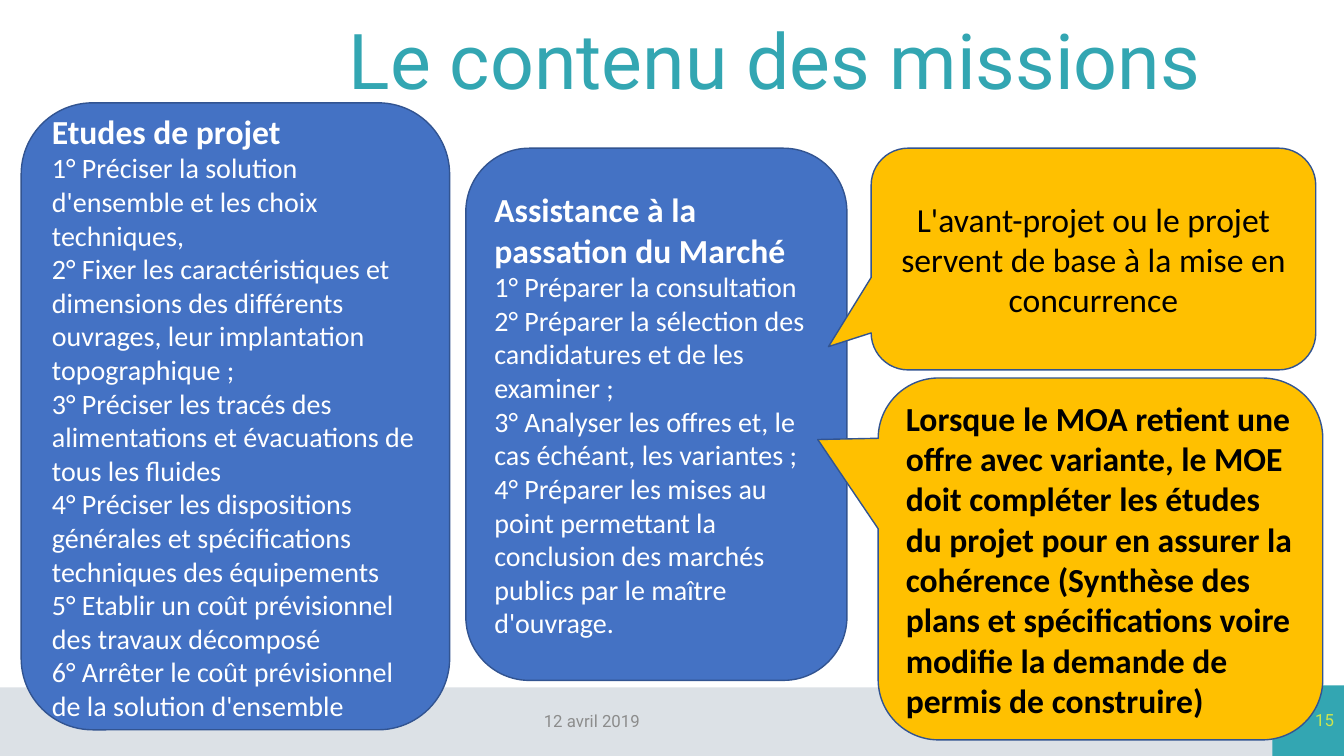
from dataclasses import dataclass

from pptx import Presentation
from pptx.dml.color import RGBColor
from pptx.enum.shapes import MSO_SHAPE as Shape
from pptx.enum.text import MSO_ANCHOR as Anchor, PP_ALIGN as Align
from pptx.util import Inches, Pt


@dataclass(frozen=True)
class Theme:
    teal: str = "33A6B2"
    band: str = "DCE1E6"
    grey: str = "8C8C8C"
    lime: str = "D0E64B"
    blue: str = "4472C4"
    outline: str = "325491"
    gold: str = "FFC000"
    white: str = "FFFFFF"
    black: str = "000000"
    head_font: str = "Roboto"
    body_font: str = "Calibri"
    title_size: int = 55
    heading_size: int = 24
    body_size: int = 20
    footer_size: int = 12


T = Theme()

PROJECT_STUDIES = [
    "Etudes de projet",
    "1° Préciser la solution d'ensemble et les choix techniques,",
    "2° Fixer les caractéristiques et dimensions des différents ouvrages, leur implantation topographique ;",
    "3° Préciser les tracés des alimentations et évacuations de tous les fluides",
    "4° Préciser les dispositions générales et spécifications techniques des équipements",
    "5° Etablir un coût prévisionnel des travaux décomposé",
    "6° Arrêter le coût prévisionnel de la solution d'ensemble",
]
CONTRACT_AWARD = [
    "Assistance à la passation du Marché",
    "1° Préparer la consultation",
    "2° Préparer la sélection des candidatures et de les examiner ;",
    "3° Analyser les offres et, le cas échéant, les variantes ;",
    "4° Préparer les mises au point permettant la conclusion des marchés publics par le maître d'ouvrage.",
]
TENDER_BASIS = "L'avant-projet ou le projet servent de base à la mise en concurrence"
VARIANT_OFFER = (
    "Lorsque le MOA retient une offre avec variante, le MOE doit compléter "
    "les études du projet pour en assurer la cohérence (Synthèse des plans et "
    "spécifications voire modifie la demande de permis de construire)"
)


def add_box(s, kind, box, fill, line=None):
    sp = s.shapes.add_shape(kind, *map(Inches, box))
    sp.shadow.inherit = False
    sp.fill.solid()
    sp.fill.fore_color.rgb = RGBColor.from_string(fill)
    if line:
        sp.line.color.rgb = RGBColor.from_string(line)
        sp.line.width = Pt(1)
    else:
        sp.line.fill.background()
    return sp


def write(sp, lines, font, size, color, align=Align.LEFT, bold=False):
    tf = sp.text_frame
    tf.word_wrap = True
    tf.vertical_anchor = Anchor.MIDDLE
    tf.text = "\n".join(lines)
    for p in tf.paragraphs:
        p.alignment = align
        for r in p.runs:
            r.font.name = font
            r.font.size = Pt(size)
            r.font.bold = bold
            r.font.color.rgb = RGBColor.from_string(color)
    return tf


def add_label(s, box, text, size, color, align):
    sp = s.shapes.add_textbox(*map(Inches, box))
    return write(sp, [text], T.head_font, size, color, align)


def add_footer(s, box, date, number):
    x, y, w, h = box
    corner = 0.71
    corner_x = x + w - corner
    add_box(s, Shape.RECTANGLE, (x, y + 0.02, w, h - 0.02), T.band)
    add_box(s, Shape.RECTANGLE, (corner_x, y, corner, h), T.teal)
    add_label(s, (x + 0.75, y + 0.15, 10.24, 0.4), date,
              T.footer_size, T.grey, Align.CENTER)
    add_label(s, (corner_x, y + 0.14, corner, 0.4), number,
              T.footer_size, T.lime, Align.RIGHT)


def add_title(s, box, text):
    tf = add_label(s, box, text, T.title_size, T.teal, Align.LEFT)
    tf.paragraphs[0].line_spacing = 0.9


def add_mission(s, box, lines):
    sp = add_box(s, Shape.FLOWCHART_ALTERNATE_PROCESS, box, T.blue, T.outline)
    tf = write(sp, lines, T.body_font, T.body_size, T.white)
    heading = tf.paragraphs[0].runs[0].font
    heading.size = Pt(T.heading_size)
    heading.bold = True


def add_callout(s, box, tip, text, align, bold=False):
    sp = add_box(s, Shape.ROUNDED_RECTANGULAR_CALLOUT, box, T.gold, T.outline)
    sp.adjustments[0], sp.adjustments[1] = tip
    sp.adjustments[2] = 0.167
    write(sp, [text], T.body_font, T.heading_size, T.black, align, bold)


def main():
    prs = Presentation()
    prs.slide_width = Inches(13.33)
    prs.slide_height = Inches(7.5)
    s = prs.slides.add_slide(prs.slide_layouts[6])
    add_footer(s, (0, 6.8, 13.33, 0.7), "12 avril 2019", "15")
    add_title(s, (3.36, 0.26, 9.43, 0.77), "Le contenu des missions")
    add_mission(s, (0.21, 1.02, 4.25, 6.22), PROJECT_STUDIES)
    add_mission(s, (4.62, 1.47, 3.78, 5.28), CONTRACT_AWARD)
    add_callout(s, (8.64, 1.47, 4.41, 2.2), (-0.596, 0.395),
                TENDER_BASIS, Align.CENTER)
    add_callout(s, (8.71, 3.75, 4.41, 3.59), (-0.636, -0.33),
                VARIANT_OFFER, Align.LEFT, bold=True)
    prs.save("out.pptx")


if __name__ == "__main__":
    main()
